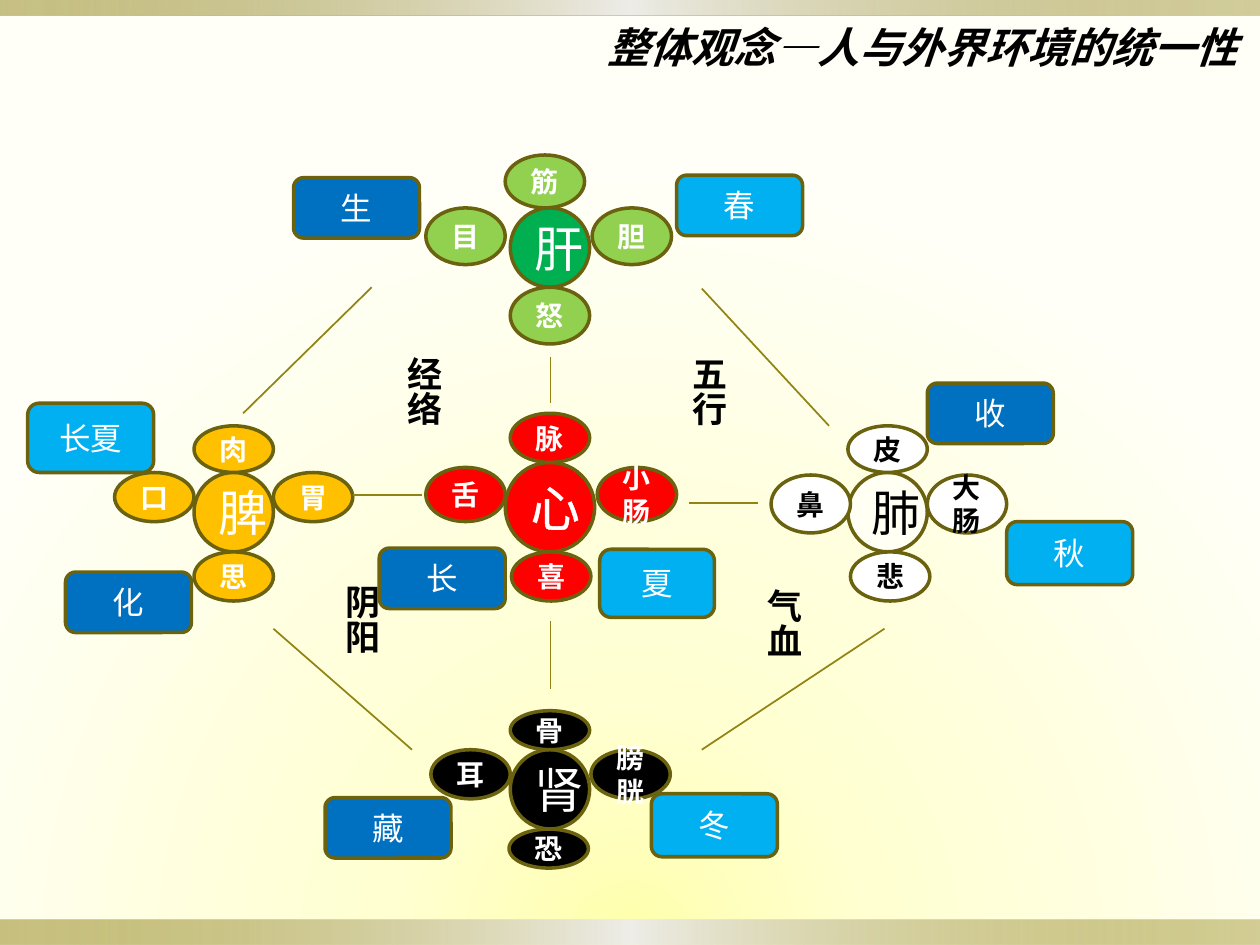
from lxml import etree
from pptx import Presentation
from pptx.dml.color import RGBColor
from pptx.enum.shapes import MSO_CONNECTOR, MSO_SHAPE
from pptx.enum.text import MSO_ANCHOR, MSO_AUTO_SIZE, PP_ALIGN
from pptx.oxml import parse_xml
from pptx.oxml.ns import qn
from pptx.util import Inches, Pt

NS = 'xmlns:a="http://schemas.openxmlformats.org/drawingml/2006/main"'
FONT, CJK = "Cabin", "Noto Sans CJK SC"
C = {
    "black": "000000", "white": "FFFFFF", "ivory": "FFFFF4", "edge": "6B6210", "link": "918415",
    "red": "FF0000", "green": "00B050", "lime": "92D050", "amber": "FFC000",
    "season": "00B0F0", "phase": "0070C0",
}
TITLE = "整体观念—人与外界环境的统一性"
BACKGROUND = [(0, "FFFFAC", 100), (31, "FFFFD2", 100), (100, "FFFFF7", 100)]
BAR = [(0, "918415", 50), (50, "EEEDE8", 100), (100, "918415", 40)]
BARS = [(0, 7.3, 10, 0.2), (0, 0, 10, 0.12)]

ORGANS = [
    ("心", (4.01, 3.67, 0.71), "red", "red", "white",
     [("小肠", 4.74, 3.71, 0.43), ("脉", 4.05, 3.28, 0.39),
      ("舌", 3.38, 3.71, 0.43), ("喜", 4.06, 4.38, 0.39)]),
    ("肝", (4.05, 1.65, 0.63), "green", "lime", "white",
     [("胆", 4.7, 1.65, 0.45), ("筋", 4.01, 1.23, 0.42),
      ("目", 3.38, 1.65, 0.45), ("怒", 4.05, 2.28, 0.45)]),
    ("脾", (1.54, 3.75, 0.63), "amber", "amber", "white",
     [("胃", 2.17, 3.75, 0.39), ("肉", 1.54, 3.38, 0.37),
      ("口", 0.91, 3.75, 0.39), ("思", 1.54, 4.38, 0.39)]),
    ("肺", (6.73, 3.75, 0.63), "ivory", "white", "black",
     [("大肠", 7.36, 3.77, 0.46), ("皮", 6.73, 3.38, 0.37),
      ("鼻", 6.12, 3.77, 0.46), ("悲", 6.75, 4.38, 0.39)]),
    ("肾", (4.05, 5.95, 0.63), "black", "black", "white",
     [("膀胱", 4.69, 5.95, 0.39), ("骨", 4.05, 5.64, 0.31),
      ("耳", 3.42, 5.95, 0.39), ("恐", 4.04, 6.58, 0.31)]),
]
PETAL_W = 0.63
LINKS = [
    (5.47, 3.99, 6.02, 3.99), (5.57, 2.29, 6.58, 3.38), (1.93, 3.28, 2.95, 2.28),
    (2.17, 4.99, 3.27, 5.95), (5.57, 5.95, 7.02, 4.99), (2.8, 3.93, 3.35, 3.93),
    (4.37, 2.83, 4.37, 3.2), (4.37, 4.93, 4.37, 5.47),
]
LABELS = [("经络", 3.04, 2.73), ("五行", 5.3, 2.73), ("阴阳", 2.55, 4.54), ("气血", 5.9, 4.57)]
CARDS = {
    "season": [("夏", 4.76, 4.36, 0.91, 0.54), ("长夏", 0.22, 3.2, 1, 0.55),
               ("春", 5.37, 1.39, 1, 0.48), ("秋", 7.99, 4.14, 1, 0.5),
               ("冬", 5.17, 6.3, 1, 0.5)],
    "phase": [("生", 2.33, 1.41, 1, 0.48), ("长", 3.01, 4.35, 1, 0.48),
              ("收", 7.36, 3.04, 1, 0.48), ("化", 0.52, 4.54, 1, 0.48),
              ("藏", 2.58, 6.33, 1, 0.48)],
}


def gradient(stops, direction):
    gs = "".join(
        f'<a:gs pos="{pos * 1000}"><a:srgbClr val="{color}"><a:alpha val="{alpha * 1000}"/>'
        f'</a:srgbClr></a:gs>' for pos, color, alpha in stops)
    return parse_xml(f'<a:gradFill {NS} rotWithShape="1"><a:gsLst>{gs}</a:gsLst>{direction}</a:gradFill>')


def replace_solid(parent, grad):
    parent.replace(parent.find(qn("a:solidFill")), grad)


def write(tf, text, color, latin=FONT, align=None, **font):
    p = tf.paragraphs[0]
    p.alignment = align
    r = p.add_run()
    r.text = text
    r.font.color.rgb = RGBColor.from_string(C[color])
    for key, value in {"name": latin, **font}.items():
        setattr(r.font, key, value)
    r.font._element.find(qn("a:latin")).addnext(parse_xml(f'<a:ea {NS} typeface="{CJK}"/>'))
    return r


def add_node(s, kind, box, text, fill, color, **font):
    sp = s.shapes.add_shape(kind, *map(Inches, box))
    sp.shadow.inherit = False
    sp.fill.solid()
    sp.fill.fore_color.rgb = RGBColor.from_string(C[fill])
    sp.line.color.rgb = RGBColor.from_string(C["edge"])
    sp.line.width = Pt(2)
    sp.text_frame.vertical_anchor = MSO_ANCHOR.MIDDLE
    return write(sp.text_frame, text, color, align=PP_ALIGN.CENTER, **font)


def add_bar(s, box):
    sp = s.shapes.add_shape(MSO_SHAPE.RECTANGLE, *map(Inches, box))
    sp.shadow.inherit = False
    sp.line.fill.background()
    sp.fill.solid()
    replace_solid(sp._element.spPr, gradient(BAR, '<a:lin ang="0" scaled="0"/>'))


def add_link(s, ends):
    line = s.shapes.add_connector(MSO_CONNECTOR.STRAIGHT, *map(Inches, ends))
    line.line.color.rgb = RGBColor.from_string(C["link"])
    line.line.width = Pt(1)
    etree.SubElement(line._element.spPr, qn("a:effectLst"))


def add_label(s, text, x, y):
    tf = s.shapes.add_textbox(*map(Inches, (x, y, 0.54, 0.65))).text_frame
    tf.word_wrap = False
    tf.auto_size = MSO_AUTO_SIZE.SHAPE_TO_FIT_TEXT
    tf._txBody.bodyPr.set("vert", "eaVert")
    write(tf, text, "black", size=Pt(20), bold=True)


def set_title(s):
    sp = s.shapes.title
    sp.left, sp.top, sp.width, sp.height = map(Inches, (4.72, 0.12, 5.28, 0.5))
    tf = sp.text_frame
    tf.word_wrap = False
    tf.auto_size = MSO_AUTO_SIZE.SHAPE_TO_FIT_TEXT
    tf.vertical_anchor = MSO_ANCHOR.TOP
    write(tf, TITLE, "black", CJK, PP_ALIGN.LEFT, size=Pt(24), bold=True, italic=True)


def main():
    prs = Presentation()
    prs.slide_width, prs.slide_height = Inches(10), Inches(7.5)
    s = prs.slides.add_slide(prs.slide_layouts[5])
    s.background.fill.solid()
    glow = '<a:path path="circle"><a:fillToRect l="50000" t="150000" r="50000" b="0"/></a:path>'
    replace_solid(s._element.cSld.bg.bgPr, gradient(BACKGROUND, glow))
    for box in BARS:
        add_bar(s, box)
    set_title(s)

    for name, (x, y, d), fill, _, color, _ in ORGANS:
        r = add_node(s, MSO_SHAPE.OVAL, (x, y, d, d), name, fill, color, size=Pt(28))
        if name == "心":
            r.font._element.insert(0, parse_xml(
                f'<a:ln {NS} w="{Pt(1.45)}"><a:solidFill><a:srgbClr val="{C["white"]}"/>'
                '</a:solidFill></a:ln>'))
    for _, _, _, fill, color, petals in ORGANS:
        for text, x, y, h in petals:
            add_node(s, MSO_SHAPE.OVAL, (x, y, PETAL_W, h), text, fill, color,
                     size=Pt(16), bold=True)
    for ends in LINKS:
        add_link(s, ends)
    for label in LABELS:
        add_label(s, *label)
    for fill, cards in CARDS.items():
        for text, *box in cards:
            add_node(s, MSO_SHAPE.ROUNDED_RECTANGLE, box, text, fill, "white", size=Pt(18))
    prs.save("out.pptx")


if __name__ == "__main__":
    main()
